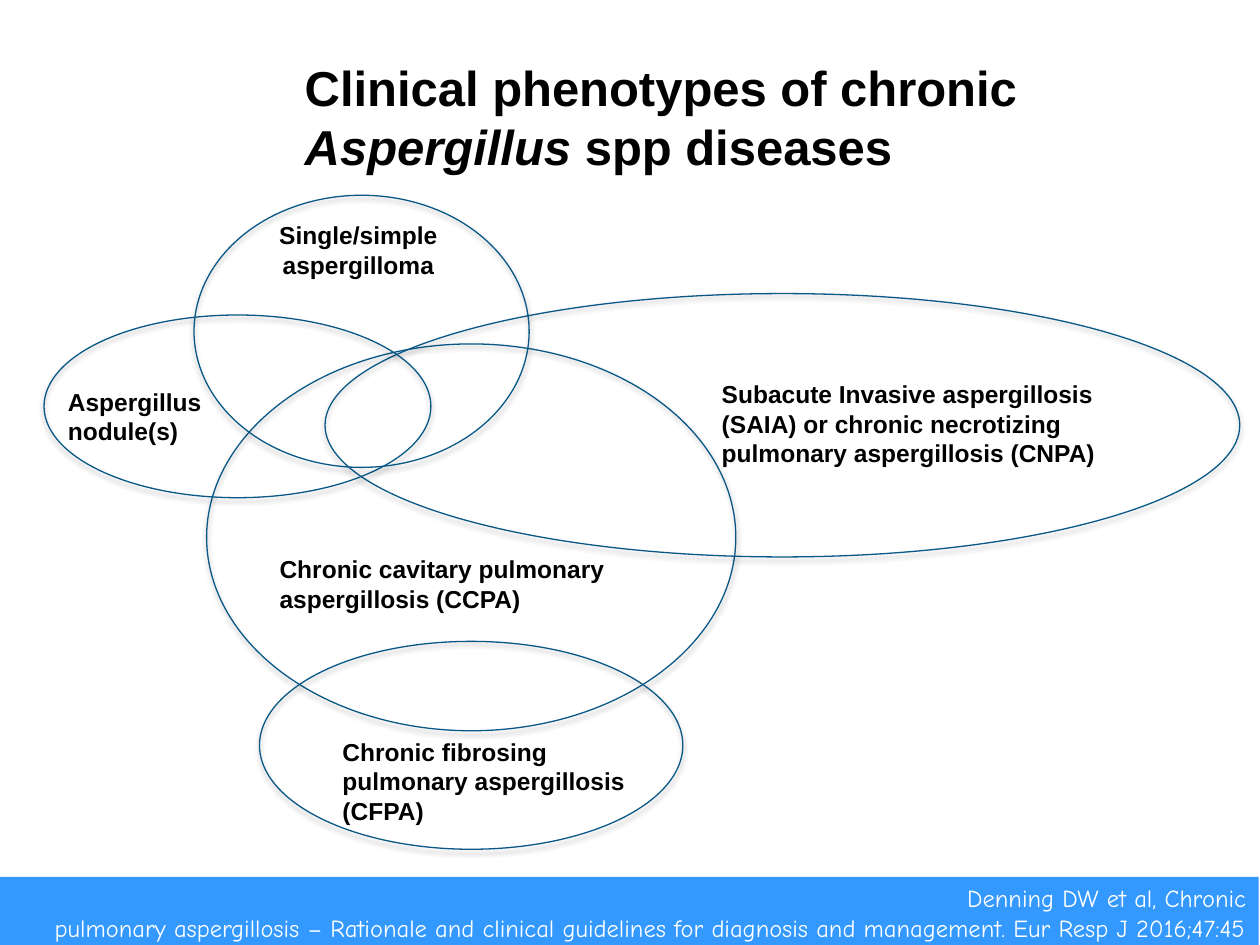
from lxml import etree
from pptx import Presentation
from pptx.dml.color import RGBColor
from pptx.enum.shapes import MSO_SHAPE
from pptx.enum.text import MSO_ANCHOR, PP_ALIGN
from pptx.oxml import parse_xml
from pptx.oxml.ns import nsdecls
from pptx.util import Inches, Pt

OVAL, RECTANGLE = MSO_SHAPE.OVAL, MSO_SHAPE.RECTANGLE
LEFT, CENTER, RIGHT = PP_ALIGN.LEFT, PP_ALIGN.CENTER, PP_ALIGN.RIGHT
TOP, MIDDLE = MSO_ANCHOR.TOP, MSO_ANCHOR.MIDDLE


def color(hex_value):
    return RGBColor.from_string(hex_value)


class PhenotypeSlide:
    FONT, FOOTER_FONT = "Arial", "Comic Neue"
    INK, OUTLINE, BAND, WHITE = "000000", "095886", "3399FF", "FFFFFF"
    LABEL_SIZE, TITLE_SIZE = 14, 28

    def __init__(self, slide):
        self.slide = slide

    def style(self, paragraph, size, name, hex_value, bold, align):
        paragraph.alignment = align
        font = paragraph.font
        font.size, font.name, font.bold = Pt(size), name, bold
        font.color.rgb = color(hex_value)

    def ellipse(self, *box):
        shape = self.slide.shapes.add_shape(OVAL, *map(Inches, box))
        shape.fill.background()
        shape.line.color.rgb = color(self.OUTLINE)
        shape.line.width = Pt(0.75)
        # Soft shadow just below the outline
        effects = parse_xml(f"<a:effectLst {nsdecls('a')}/>")
        shadow = etree.SubElement(
            effects, effects.tag.replace("effectLst", "outerShdw"),
            blurRad=str(Pt(3.1)), dist=str(Pt(1.8)), dir="5400000",
            rotWithShape="0")
        tint = etree.SubElement(
            shadow, shadow.tag.replace("outerShdw", "srgbClr"), val=self.INK)
        etree.SubElement(
            tint, tint.tag.replace("srgbClr", "alpha"), val="35000")
        shape._element.spPr.append(effects)

    def text(self, box, lines, size=LABEL_SIZE, align=LEFT, anchor=TOP,
             wrap=True):
        frame = self.slide.shapes.add_textbox(*map(Inches, box)).text_frame
        frame.word_wrap = wrap
        frame.vertical_anchor = anchor
        frame.text = "\n".join(lines)
        for paragraph in frame.paragraphs:
            self.style(paragraph, size, self.FONT, self.INK, True, align)
        return frame

    def title(self, box, parts):
        frame = self.text(box, [""], self.TITLE_SIZE, anchor=MIDDLE)
        for words, italic in parts:
            run = frame.paragraphs[0].add_run()
            run.text = words
            run.font.italic = italic

    def footer(self, box, words, first_line_indent):
        shape = self.slide.shapes.add_shape(RECTANGLE, *map(Inches, box))
        shape.shadow.inherit = False
        shape.fill.solid()
        shape.fill.fore_color.rgb = color(self.BAND)
        shape.line.fill.background()
        frame = shape.text_frame
        frame.word_wrap = True
        frame.vertical_anchor = TOP
        frame.text = words
        paragraph = frame.paragraphs[0]
        properties = paragraph._p.get_or_add_pPr()
        properties.set("marL", "0")
        properties.set("indent", str(Inches(first_line_indent)))
        self.style(paragraph, self.LABEL_SIZE, self.FOOTER_FONT, self.WHITE,
                   False, RIGHT)


def main():
    presentation = Presentation()
    presentation.slide_width = Inches(10)
    presentation.slide_height = Inches(7.5)
    page = PhenotypeSlide(
        presentation.slides.add_slide(presentation.slide_layouts[6]))

    # Title
    page.title((2.32, 0.3, 7.18, 1.25), [
        ("Clinical phenotypes of chronic ", False),
        ("Aspergillus ", True),
        ("spp diseases", False)])

    # Overlapping disease groups
    for box in [(1.64, 2.73, 4.2, 3.07),   # chronic cavitary
                (2.58, 2.33, 7.26, 2.09),  # subacute invasive
                (0.35, 2.5, 3.07, 1.45),   # nodules
                (1.54, 1.55, 2.66, 2.16),  # aspergilloma
                (2.06, 5.09, 3.36, 1.65)]:  # chronic fibrosing
        page.ellipse(*box)

    # Group labels
    page.text((2.11, 1.7, 1.47, 0.57), ["Single/simple", "aspergilloma"],
              align=CENTER, wrap=False)
    page.text((0.44, 3.02, 1.27, 0.57), ["Aspergillus", "nodule(s)"],
              wrap=False)
    page.text((2.12, 4.35, 3.41, 0.57),
              ["Chronic cavitary pulmonary", "aspergillosis (CCPA)"])
    page.text((2.62, 5.8, 2.46, 0.81),
              ["Chronic fibrosing", "pulmonary aspergillosis", "(CFPA)"],
              wrap=False)
    page.text((5.63, 2.96, 3.63, 0.81),
              ["Subacute Invasive aspergillosis (SAIA) or chronic necrotizing "
               "pulmonary aspergillosis (CNPA)"])

    # Citation band
    page.footer((0, 6.96, 9.99, 0.57),
                "Denning DW et al, Chronic pulmonary aspergillosis – Rationale "
                "and clinical guidelines for diagnosis and management. "
                "Eur Resp J 2016;47:45", first_line_indent=7.2)

    presentation.save("out.pptx")


if __name__ == "__main__":
    main()
